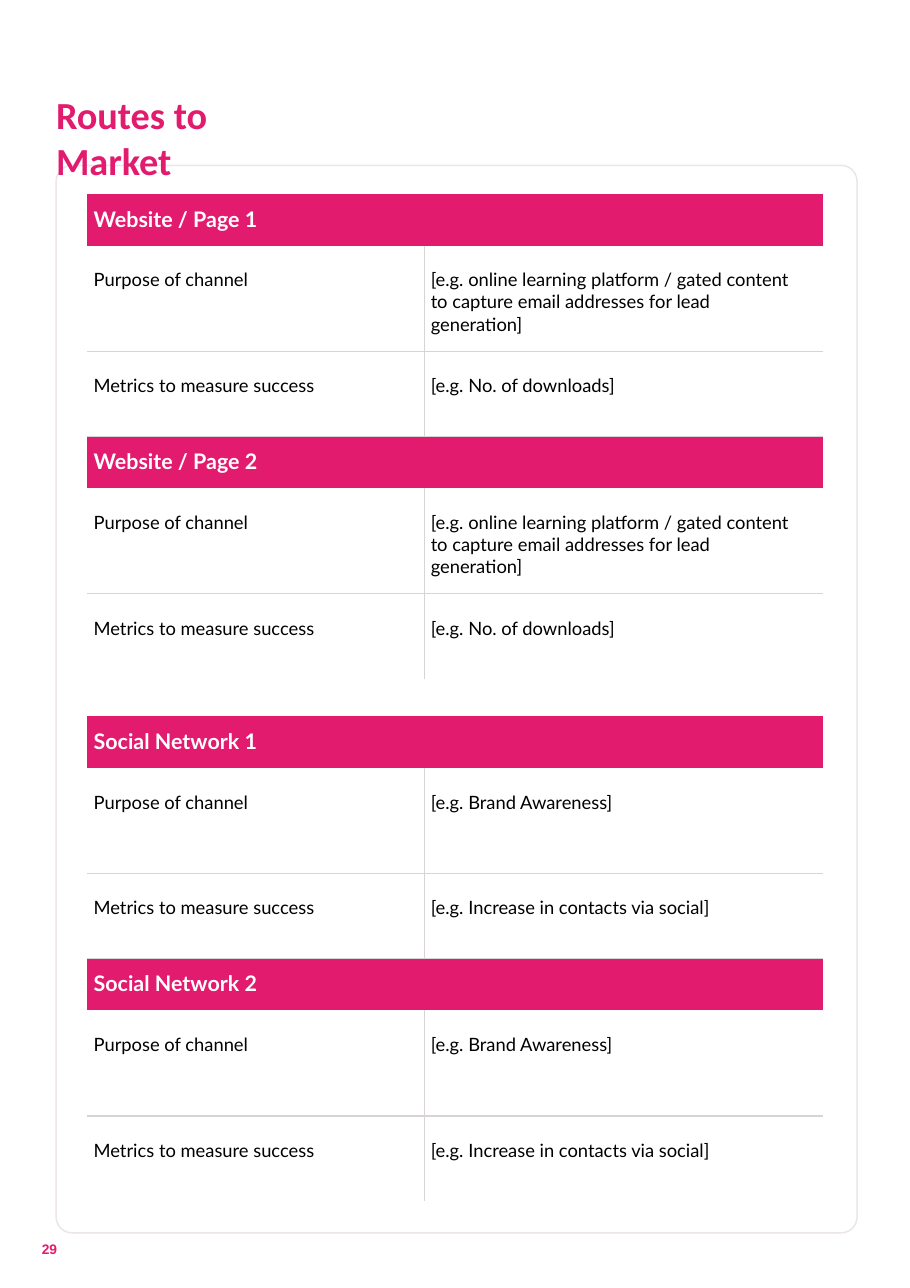
"""Build the Routes to Market page with two tables of sales channels."""
from dataclasses import dataclass

from lxml.etree import SubElement
from pptx import Presentation
from pptx.dml.color import RGBColor
from pptx.enum.shapes import MSO_SHAPE as Shape
from pptx.oxml.ns import qn
from pptx.slide import Slide
from pptx.table import _Cell as Cell
from pptx.util import Inches, Pt

PINK = RGBColor(0xE2, 0x1B, 0x6F)
WHITE = RGBColor(0xFF, 0xFF, 0xFF)
BLACK = RGBColor(0x00, 0x00, 0x00)
RULE_GRAY = RGBColor(0xD9, 0xD4, 0xD4)
FRAME_GRAY = RGBColor(0xEC, 0xE6, 0xE6)
PLAIN_STYLE = "{2D5ABB26-0587-4C30-8999-92F81FD0307C}"
COLUMN_WIDTHS = (3.06, 3.62)
ROW_HEIGHTS = (0.47, 0.96, 0.77)


@dataclass
class ChannelTable:
    top: float
    headings: tuple[str, ...]
    purpose: str
    metrics: str


@dataclass
class Label:
    text: str
    left: float
    top: float
    width: float
    height: float
    font: str
    size: float
    line_spacing: float | None = None


TABLES = (
    ChannelTable(
        1.76,
        ("Website / Page 1", "Website / Page 2"),
        "[e.g. online learning platform / gated content to capture "
        "email addresses for lead generation]",
        "[e.g. No. of downloads]",
    ),
    ChannelTable(
        6.5,
        ("Social Network 1", "Social Network 2"),
        "[e.g. Brand Awareness]",
        "[e.g. Increase in contacts via social]",
    ),
)
PAGE_NUMBER = Label("29", 0.38, 11.28, 0.22, 0.15, "Arial", 9, 9.2)
TITLE = Label("Routes to Market", 0.51, 0.83, 2.3, 0.44, "Calibri", 25)


def add_frame(slide: Slide) -> None:
    frame = slide.shapes.add_shape(
        Shape.ROUNDED_RECTANGLE, Inches(0.51), Inches(1.5), Inches(7.27), Inches(9.69)
    )
    frame.adjustments[0] = 0.02
    frame.shadow.inherit = False
    frame.fill.background()
    frame.line.color.rgb = FRAME_GRAY
    frame.line.width = Pt(1)


def add_label(slide: Slide, label: Label) -> None:
    box = slide.shapes.add_textbox(
        Inches(label.left), Inches(label.top), Inches(label.width), Inches(label.height)
    )
    frame = box.text_frame
    frame.word_wrap = True
    frame.margin_left = frame.margin_top = frame.margin_right = frame.margin_bottom = 0
    paragraph = frame.paragraphs[0]
    paragraph.text = label.text
    if label.line_spacing:
        paragraph.line_spacing = Pt(label.line_spacing)
    paragraph.font.name = label.font
    paragraph.font.size = Pt(label.size)
    paragraph.font.bold = True
    paragraph.font.color.rgb = PINK


def add_borders(cell: Cell, sides: str) -> None:
    properties = cell._tc.get_or_add_tcPr()
    for side in sides:
        line = SubElement(properties, qn(f"a:ln{side}"), w=str(Pt(1)))
        fill = SubElement(line, qn("a:solidFill"))
        SubElement(fill, qn("a:srgbClr"), val=str(RULE_GRAY))


def write_cell(cell: Cell, text: str, size: float, color: RGBColor,
               margin_top: float, bold: bool = False) -> None:
    cell.margin_left = Inches(0.06)
    cell.margin_top = Inches(margin_top)
    cell.margin_right = Inches(0.25)
    cell.margin_bottom = 0
    paragraph = cell.text_frame.paragraphs[0]
    paragraph.text = text
    paragraph.font.name = "Lato"
    paragraph.font.size = Pt(size)
    paragraph.font.bold = bold
    paragraph.font.color.rgb = color


def add_channel_table(slide: Slide, channel: ChannelTable) -> None:
    heights = ROW_HEIGHTS * len(channel.headings)
    graphic = slide.shapes.add_table(
        len(heights), len(COLUMN_WIDTHS), Inches(0.79), Inches(channel.top),
        Inches(sum(COLUMN_WIDTHS)), Inches(sum(heights))
    )
    table = graphic.table
    table.first_row = table.horz_banding = False
    table._tbl.tblPr.find(qn("a:tableStyleId")).text = PLAIN_STYLE
    for column, width in zip(table.columns, COLUMN_WIDTHS):
        column.width = Inches(width)
    for row, height in zip(table.rows, heights):
        row.height = Inches(height)

    details = (
        ("Purpose of channel", channel.purpose, "B"),
        ("Metrics to measure success", channel.metrics, "T"),
    )
    for index, heading in enumerate(channel.headings):
        first = index * len(ROW_HEIGHTS)
        header = table.cell(first, 0)
        header.merge(table.cell(first, 1))
        write_cell(header, heading, 14, WHITE, 0.11, bold=True)
        header.fill.solid()
        header.fill.fore_color.rgb = PINK
        for row, (name, example, edge) in enumerate(details, first + 1):
            for column, (text, side) in enumerate(((name, "R"), (example, "L"))):
                cell = table.cell(row, column)
                write_cell(cell, text, 12, BLACK, 0.21)
                add_borders(cell, side + edge)
                cell.fill.background()


def main() -> None:
    presentation = Presentation()
    presentation.slide_width = Inches(8.26)
    presentation.slide_height = Inches(11.69)
    slide = presentation.slides.add_slide(presentation.slide_layouts[6])
    add_frame(slide)
    for channel in TABLES:
        add_channel_table(slide, channel)
    for label in (PAGE_NUMBER, TITLE):
        add_label(slide, label)
    presentation.save("out.pptx")


if __name__ == "__main__":
    main()
